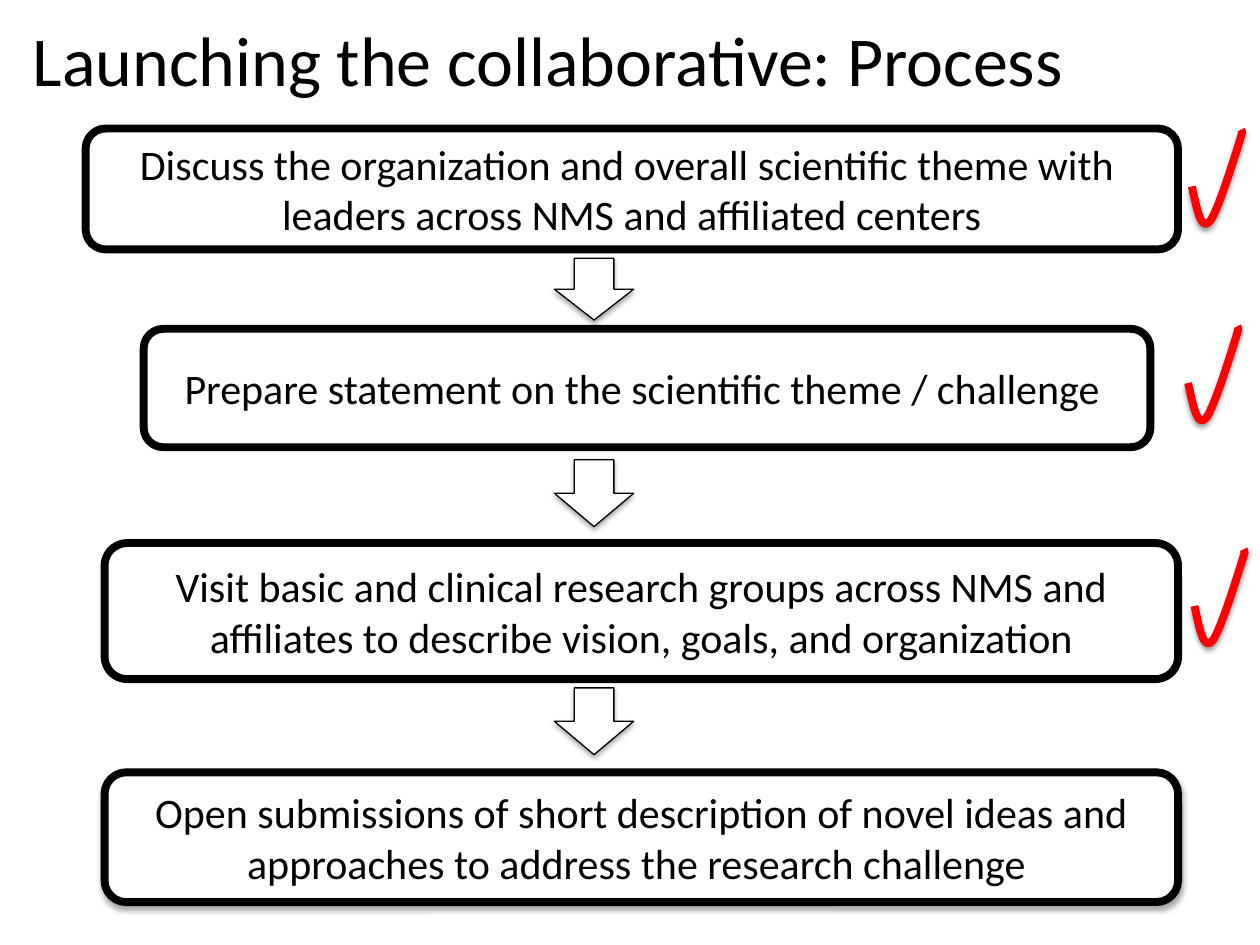
from dataclasses import dataclass

from lxml.etree import SubElement
from pptx import Presentation
from pptx.dml.color import RGBColor
from pptx.enum.shapes import MSO_SHAPE
from pptx.enum.text import MSO_ANCHOR, PP_ALIGN
from pptx.oxml.ns import qn
from pptx.util import Inches, Pt

BLACK, WHITE, RED = "000000", "FFFFFF", "FF0000"
ARROW_LEFT, ARROW_WIDTH = 4.4, 0.63

# Tick outline, relative to its top left corner
TICK_START = (0, 0.45)
TICK_CURVES = [
    ((0.04, 0.63), (0.07, 0.8), (0.14, 0.73)),
    ((0.21, 0.66), (0.4, 0.02), (0.4, 0.02)),
]
TICK_TIP = (0.39, 0)
CURVE_STEPS = 16


@dataclass
class Step:
    text: str
    left: float
    top: float
    width: float
    height: float
    shadow: bool = False


@dataclass
class Arrow:
    top: float
    height: float


@dataclass
class Tick:
    left: float
    top: float


STEPS = [
    Step("Discuss the organization and overall scientific theme with \v"
         "leaders across NMS and affiliated centers", 0.68, 1.02, 8.67, 0.96),
    Step("Prepare statement on the scientific theme / challenge ",
         1.14, 2.61, 7.99, 0.94),
    Step("Visit basic and clinical research groups across NMS and affiliates "
         "to describe vision, goals, and organization", 0.83, 4.31, 8.52, 1.08),
    Step("Open submissions of short description of novel ideas and approaches "
         "to address the research challenge ", 0.83, 6.13, 8.52, 1.03, shadow=True),
]
ARROWS = [Arrow(2.05, 0.49), Arrow(3.65, 0.53), Arrow(5.46, 0.53)]
TICKS = [Tick(9.46, 1.03), Tick(9.43, 2.59), Tick(9.48, 4.36)]


def color(value: str) -> RGBColor:
    return RGBColor.from_string(value)


def write(frame, text: str, *, size: float, align=PP_ALIGN.LEFT,
          anchor=MSO_ANCHOR.TOP) -> None:
    frame.word_wrap = True
    frame.vertical_anchor = anchor
    frame.text = text
    paragraph = frame.paragraphs[0]
    paragraph.alignment = align
    for run in paragraph.runs:
        run.font.size = Pt(size)
        run.font.name = "Calibri"
        run.font.color.rgb = color(BLACK)


def style(shape, *, line: str, weight: float, fill: str | None = None,
          shadow_alpha: int = 0) -> None:
    if fill:
        shape.fill.solid()
        shape.fill.fore_color.rgb = color(fill)
    else:
        shape.fill.background()
    shape.line.color.rgb = color(line)
    shape.line.width = Pt(weight)
    shape.shadow.inherit = False
    if shadow_alpha:
        effects = shape._element.spPr.find(qn("a:effectLst"))
        outer = SubElement(effects, qn("a:outerShdw"), blurRad=str(Pt(3.1)),
                           dist=str(Pt(1.8)), dir="5400000", rotWithShape="0")
        tint = SubElement(outer, qn("a:srgbClr"), val=BLACK)
        SubElement(tint, qn("a:alpha"), val=str(shadow_alpha * 1000))


def draw_step(slide, step: Step) -> None:
    box = slide.shapes.add_shape(
        MSO_SHAPE.ROUNDED_RECTANGLE, Inches(step.left), Inches(step.top),
        Inches(step.width), Inches(step.height))
    style(box, fill=WHITE, line=BLACK, weight=4.5,
          shadow_alpha=35 if step.shadow else 0)
    write(box.text_frame, step.text, size=24, align=PP_ALIGN.CENTER,
          anchor=MSO_ANCHOR.MIDDLE)


def draw_arrow(slide, arrow: Arrow) -> None:
    shape = slide.shapes.add_shape(
        MSO_SHAPE.DOWN_ARROW, Inches(ARROW_LEFT), Inches(arrow.top),
        Inches(ARROW_WIDTH), Inches(arrow.height))
    style(shape, fill=WHITE, line=BLACK, weight=0.75, shadow_alpha=35)


def tick_points() -> list[tuple[float, float]]:
    """Sample the cubic curves of the tick and add its tip."""
    points = [TICK_START]
    for first, second, end in TICK_CURVES:
        start = points[-1]
        for i in range(1, CURVE_STEPS + 1):
            t = i / CURVE_STEPS
            u = 1 - t
            points.append(tuple(
                u**3 * a + 3 * u**2 * t * b + 3 * u * t**2 * c + t**3 * d
                for a, b, c, d in zip(start, first, second, end)))
    return points + [TICK_TIP]


def draw_tick(slide, tick: Tick) -> None:
    start, *others = [(Inches(tick.left + x), Inches(tick.top + y))
                      for x, y in tick_points()]
    builder = slide.shapes.build_freeform(*start)
    builder.add_line_segments(others, close=False)
    style(builder.convert_to_shape(), line=RED, weight=4.5, shadow_alpha=38)


def main() -> None:
    deck = Presentation()
    deck.slide_width, deck.slide_height = Inches(10), Inches(7.5)
    slide = deck.slides.add_slide(deck.slide_layouts[5])

    # Heading
    heading = slide.shapes.title
    heading.left, heading.top = Inches(0.16), Inches(0.08)
    heading.width, heading.height = Inches(9.84), Inches(0.77)
    write(heading.text_frame, "Launching the collaborative: Process", size=40)

    # Process steps, the arrows between them, and ticks for finished steps
    for step in STEPS:
        draw_step(slide, step)
    for arrow in ARROWS:
        draw_arrow(slide, arrow)
    for tick in TICKS:
        draw_tick(slide, tick)

    deck.save("out.pptx")


if __name__ == "__main__":
    main()
